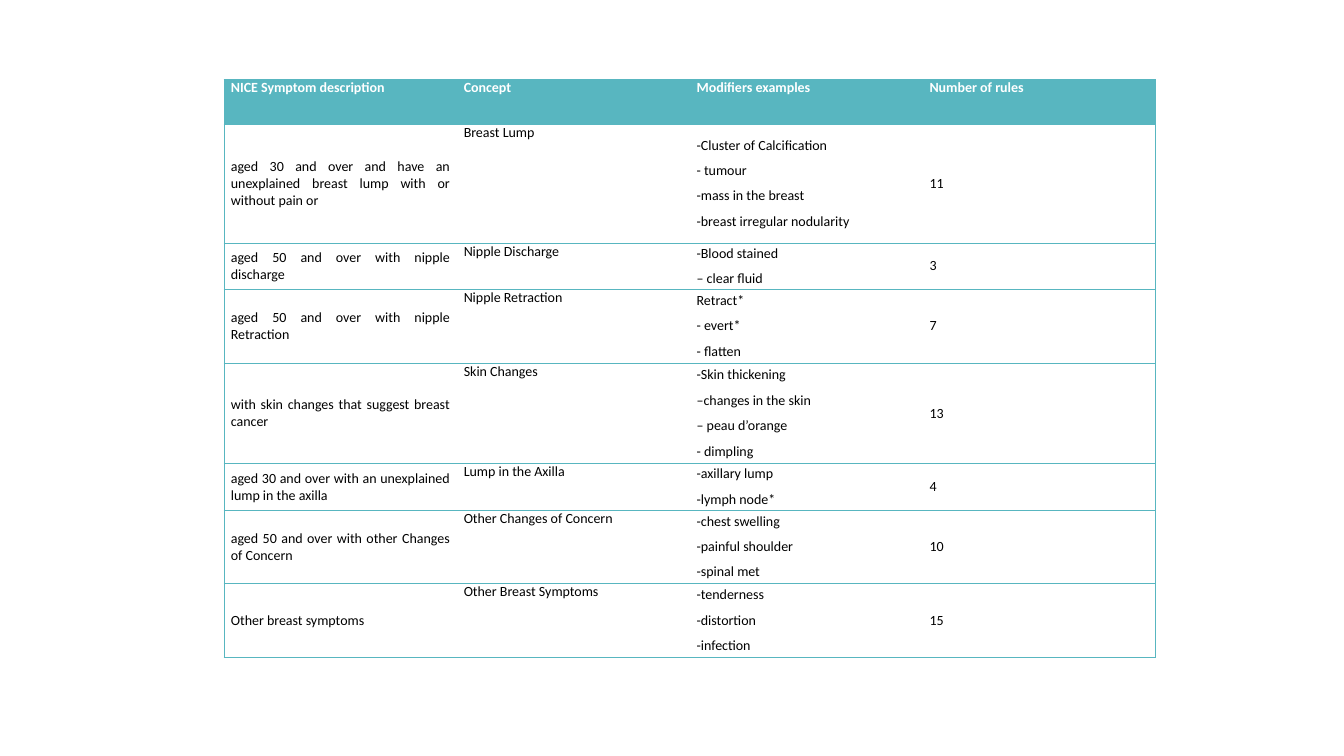
from dataclasses import dataclass

from lxml import etree
from pptx import Presentation
from pptx.dml.color import RGBColor
from pptx.enum.text import MSO_ANCHOR, PP_ALIGN
from pptx.oxml.ns import qn
from pptx.util import Inches, Pt

TOP, MIDDLE = MSO_ANCHOR.TOP, MSO_ANCHOR.MIDDLE
LEFT, JUSTIFY = PP_ALIGN.LEFT, PP_ALIGN.JUSTIFY

COLORS = {"teal": "58B6C0", "white": "FFFFFF", "black": "000000"}
FONT = "Calibri"
COLUMN_WIDTH = 2.31
HEADER_HEIGHT = 0.44
HEADINGS = ["NICE Symptom description", "Concept", "Modifiers examples", "Number of rules"]


@dataclass
class Symptom:
    description: str
    concept: str
    modifiers: list[str]
    rules: int
    height: float
    modifier_align: PP_ALIGN = JUSTIFY


SYMPTOMS = [
    Symptom("aged 30 and over and have an unexplained breast lump with or without pain or",
            "Breast Lump",
            ["-Cluster of Calcification", "- tumour", "-mass in the breast",
             "-breast irregular nodularity"], 11, 1.18, LEFT),
    Symptom("aged 50 and over with nipple discharge", "Nipple Discharge",
            ["-Blood stained", "– clear fluid"], 3, 0.46),
    Symptom("aged 50 and over with nipple Retraction", "Nipple Retraction",
            ["Retract*", "- evert*", "- flatten"], 7, 0.73),
    Symptom("with skin changes that suggest breast cancer", "Skin Changes",
            ["-Skin thickening", "–changes in the skin", "– peau d’orange", "- dimpling"],
            13, 1),
    Symptom("aged 30 and over with an unexplained lump in the axilla", "Lump in the Axilla",
            ["-axillary lump", "-lymph node*"], 4, 0.46),
    Symptom("aged 50 and over with other Changes of Concern", "Other Changes of Concern",
            ["-chest swelling", "-painful shoulder", "-spinal met"], 10, 0.73),
    Symptom("Other breast symptoms", "Other Breast Symptoms",
            ["-tenderness", "-distortion", "-infection"], 15, 0.73),
]


def set_borders(cell, column: int) -> None:
    """Rule every row, and close the table at its outer sides."""
    shown = {"a:lnL": column == 0, "a:lnR": column == len(HEADINGS) - 1,
             "a:lnT": True, "a:lnB": True}
    properties = cell._tc.get_or_add_tcPr()
    for side, visible in shown.items():
        line = etree.SubElement(properties, qn(side), w=str(Pt(0.5)))
        if visible:
            fill = etree.SubElement(line, qn("a:solidFill"))
            etree.SubElement(fill, qn("a:srgbClr"), val=COLORS["teal"])
        else:
            etree.SubElement(line, qn("a:noFill"))


def fill_cell(cell, column: int, lines: list[str], anchor: MSO_ANCHOR,
              align: PP_ALIGN = JUSTIFY, header: bool = False) -> None:
    set_borders(cell, column)
    if header:
        cell.fill.solid()
        cell.fill.fore_color.rgb = RGBColor.from_string(COLORS["teal"])
    else:
        cell.fill.background()
    cell.margin_left = cell.margin_right = Inches(0.07)
    cell.margin_top = cell.margin_bottom = 0
    cell.vertical_anchor = anchor
    cell.text_frame.text = "\n".join(lines)
    for para in cell.text_frame.paragraphs:
        para.alignment = align
        para.space_after = Pt(6)
        for span in para.runs:
            span.font.name = FONT
            span.font.size = Pt(10)
            span.font.bold = header
            span.font.color.rgb = RGBColor.from_string(COLORS["white" if header else "black"])


def main() -> None:
    deck = Presentation()
    deck.slide_width, deck.slide_height = Inches(13.33), Inches(7.5)
    page = deck.slides.add_slide(deck.slide_layouts[6])

    # Table frame
    heights = [HEADER_HEIGHT] + [symptom.height for symptom in SYMPTOMS]
    table = page.shapes.add_table(
        len(heights), len(HEADINGS), Inches(2.22), Inches(0.79),
        Inches(COLUMN_WIDTH * len(HEADINGS)), Inches(sum(heights))).table
    table.horz_banding = False
    for column in table.columns:
        column.width = Inches(COLUMN_WIDTH)
    for row, height in zip(table.rows, heights):
        row.height = Inches(height)

    # Header row
    for column, heading in enumerate(HEADINGS):
        fill_cell(table.cell(0, column), column, [heading], TOP, header=True)

    # Symptom rows
    for row, symptom in enumerate(SYMPTOMS, start=1):
        fill_cell(table.cell(row, 0), 0, [symptom.description], MIDDLE)
        fill_cell(table.cell(row, 1), 1, [symptom.concept], TOP)
        fill_cell(table.cell(row, 2), 2, symptom.modifiers, MIDDLE, symptom.modifier_align)
        fill_cell(table.cell(row, 3), 3, [str(symptom.rules)], MIDDLE)

    deck.save("out.pptx")


if __name__ == "__main__":
    main()
